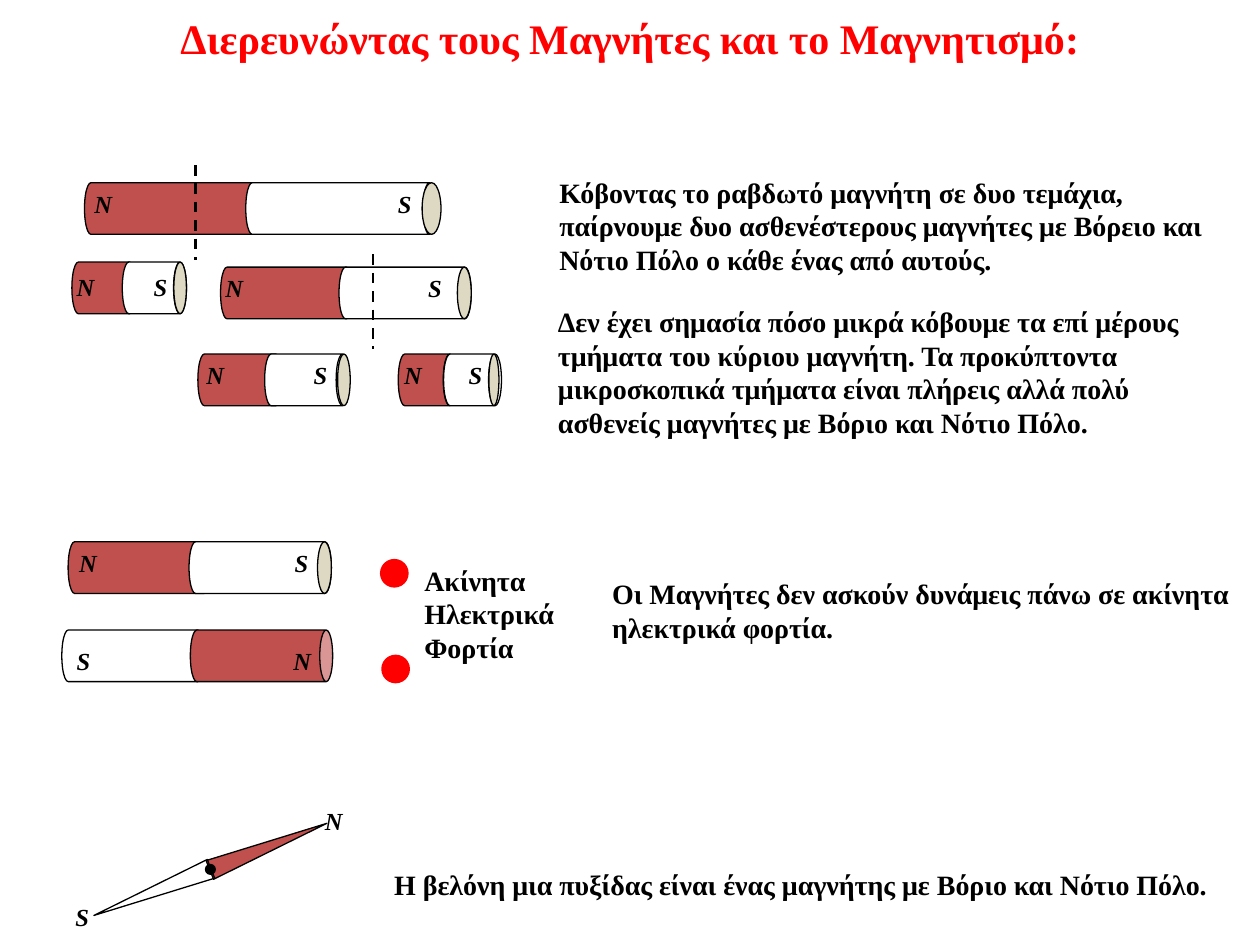
from dataclasses import dataclass

from lxml import etree
from pptx import Presentation, util as u
from pptx.dml.color import RGBColor
from pptx.enum import dml, shapes, text
from pptx.oxml import ns


@dataclass(frozen=True)
class Theme:
    font: str = "Times New Roman"
    title_size: int = 24
    body_size: int = 16
    label_size: int = 14
    black: str = "000000"
    red: str = "FF0000"
    north: str = "C0504D"
    south: str = "FFFFFF"
    cap: str = "DDD9C3"
    thin: float = 0.75
    dash: float = 1.5
    thick: float = 2


THEME = Theme()
BAR = 0.41  # diameter of every bar magnet
LABEL_WIDTH = {"N": 0.34, "S": 0.31}


def color(value):
    return RGBColor.from_string(value)


def inches(box):
    return [u.Inches(value) for value in box]


def write(holder, lines, size, ink=THEME.black, align=text.PP_ALIGN.LEFT, wrap=True, italic=False):
    frame = holder.text_frame
    frame_format = {"word_wrap": wrap, "vertical_anchor": text.MSO_ANCHOR.TOP,
                    "auto_size": text.MSO_AUTO_SIZE.SHAPE_TO_FIT_TEXT}
    for name, value in frame_format.items():
        setattr(frame, name, value)
    font_format = {"name": THEME.font, "size": u.Pt(size), "bold": True, "italic": italic}
    for index, line in enumerate(lines):
        para = frame.add_paragraph() if index else frame.paragraphs[0]
        para.alignment = align
        span = para.add_run()
        span.text = line
        for name, value in font_format.items():
            setattr(span.font, name, value)
        span.font.color.rgb = color(ink)


def add_text(page, box, *lines):
    write(page.shapes.add_textbox(*inches(box)), lines, THEME.body_size)


def add_pole(page, left, top, pole):
    holder = page.shapes.add_textbox(*inches((left, top, LABEL_WIDTH[pole], 0.34)))
    write(holder, [pole], THEME.label_size, wrap=False, italic=True)


def add_figure(page, kind, box, fill, line=THEME.black, width=THEME.thin, rotation=0):
    figure = page.shapes.add_shape(kind, *inches(box))
    figure.shadow.inherit = False
    figure.rotation = rotation
    if fill:
        figure.fill.solid()
        figure.fill.fore_color.rgb = color(fill)
    else:
        figure.fill.background()
    figure.line.color.rgb = color(line)
    figure.line.width = u.Pt(width)


def add_dot(page, left, top, size, ink):
    add_figure(page, shapes.MSO_SHAPE.OVAL, (left, top, size, size), ink, ink, THEME.thick)


def add_cut(page, x, top):
    cut = page.shapes.add_connector(shapes.MSO_CONNECTOR.STRAIGHT, *inches((x, top, x, top + 0.75)))
    cut.line.color.rgb = color(THEME.black)
    cut.line.width = u.Pt(THEME.dash)
    cut.line.dash_style = dml.MSO_LINE.DASH
    etree.SubElement(cut._element.spPr, ns.qn("a:effectLst"))


def add_magnet(page, top, starts, half, labels, cap=None, poles="NS", label_drop=0):
    """Two lying cylinders, an end cap given as (left, width), and a letter on each pole."""
    fills = {"N": THEME.north, "S": THEME.south}
    for left, pole in zip(starts, poles):
        # A standing can turned a quarter keeps its centre
        box = (left + (half - BAR) / 2, top + (BAR - half) / 2, BAR, half)
        add_figure(page, shapes.MSO_SHAPE.CAN, box, fills[pole], rotation=90)
    if cap:
        add_figure(page, shapes.MSO_SHAPE.OVAL, (cap[0], top, cap[1], BAR), THEME.cap)
    for left, pole in zip(labels, poles):
        add_pole(page, left, top + label_drop, pole)


def add_title(page, box):
    title = page.shapes.title
    title.left, title.top, title.width, title.height = inches(box)
    write(title, ["Διερευνώντας τους Μαγνήτες και το Μαγνητισμό:"], THEME.title_size,
          THEME.red, text.PP_ALIGN.CENTER)


def add_cutting(page, left, top):
    """A bar magnet cut twice, with each piece below it."""
    pieces = [  # drop, starts of the halves, half length, labels, cap, label drop
        (0, (0.16, 1.44), 1.51, (0.14, 2.55), (2.84, 0.15), 0),
        (0.67, (1.24, 2.18), 1.05, (1.18, 2.79), (3.12, 0.11), 0),
        (0.63, (0.06, 0.46), 0.51, (0, 0.61), (0.87, 0.1), 0.03),
        (1.36, (2.65, 3.01), 0.46, (2.6, 3.11), (3.37, 0.08), 0),
        (1.36, (1.06, 1.59), 0.67, (1.03, 1.88), (2.17, 0.1), 0),
    ]
    for drop, starts, half, labels, cap, label_drop in pieces:
        add_magnet(page, top + drop, [left + x for x in starts], half,
                   [left + x for x in labels], (left + cap[0], cap[1]), label_drop=label_drop)
    add_cut(page, left + 1.04, top - 0.14)
    add_cut(page, left + 2.45, top + 0.57)
    add_text(page, (left + 3.83, top - 0.11, 5.55, 0.91),
             "Κόβοντας το ραβδωτό μαγνήτη σε δυο τεμάχια, παίρνουμε δυο ασθενέστερους "
             "μαγνήτες με Βόρειο και Νότιο Πόλο ο κάθε ένας από αυτούς.")
    add_text(page, (left + 3.82, top + 0.92, 5.55, 1.18),
             "Δεν έχει σημασία πόσο μικρά κόβουμε τα επί μέρους τμήματα του κύριου μαγνήτη. "
             "Τα προκύπτοντα μικροσκοπικά τμήματα είναι πλήρεις αλλά πολύ ασθενείς μαγνήτες "
             "με Βόριο και Νότιο Πόλο.")


def add_charges(page, left, top):
    """Two opposed magnets beside charges at rest."""
    add_magnet(page, top, (left + 0.05, left + 1.01), 1.13, (left + 0.04, left + 1.75),
               (left + 2.03, 0.11))
    add_magnet(page, top + 0.7, (left, left + 1.02), 1.13, (left + 0.02, left + 1.74),
               poles="SN", label_drop=0.08)
    add_dot(page, left + 2.54, top + 0.15, 0.2, THEME.red)
    add_dot(page, left + 2.55, top + 0.91, 0.2, THEME.red)
    add_text(page, (left + 2.78, top + 0.12, 1.27, 0.91), "Ακίνητα", "Ηλεκτρικά", "Φορτία")
    add_text(page, (left + 4.27, top + 0.23, 5.12, 0.64),
             "Οι Μαγνήτες δεν ασκούν δυνάμεις πάνω σε ακίνητα ηλεκτρικά φορτία.")


def add_compass(page, left, top):
    """A compass needle on its pivot."""
    tilt = 68.3
    triangle = shapes.MSO_SHAPE.ISOSCELES_TRIANGLE
    add_figure(page, triangle, (left + 1.55, top - 0.13, 0.16, 1), THEME.north, rotation=tilt)
    add_figure(page, triangle, (left + 0.63, top + 0.23, 0.16, 1), None, rotation=tilt + 180)
    add_dot(page, left + 1.14, top + 0.52, 0.06, THEME.black)
    add_text(page, (left + 2.53, top + 0.49, 6.85, 0.37),
             "Η βελόνη μια πυξίδας είναι ένας μαγνήτης με Βόριο και Νότιο Πόλο.")
    add_pole(page, left, top + 0.76, "S")
    add_pole(page, left + 1.98, top, "N")


def main():
    deck = Presentation()
    deck.slide_width, deck.slide_height = inches((10, 7.5))
    page = deck.slides.add_slide(deck.slide_layouts[5])
    add_title(page, (0.08, 0.05, 9.84, 0.5))
    add_cutting(page, 0.51, 1.45)
    add_charges(page, 0.49, 4.3)
    add_compass(page, 0.5, 6.35)
    deck.save("out.pptx")


if __name__ == "__main__":
    main()
